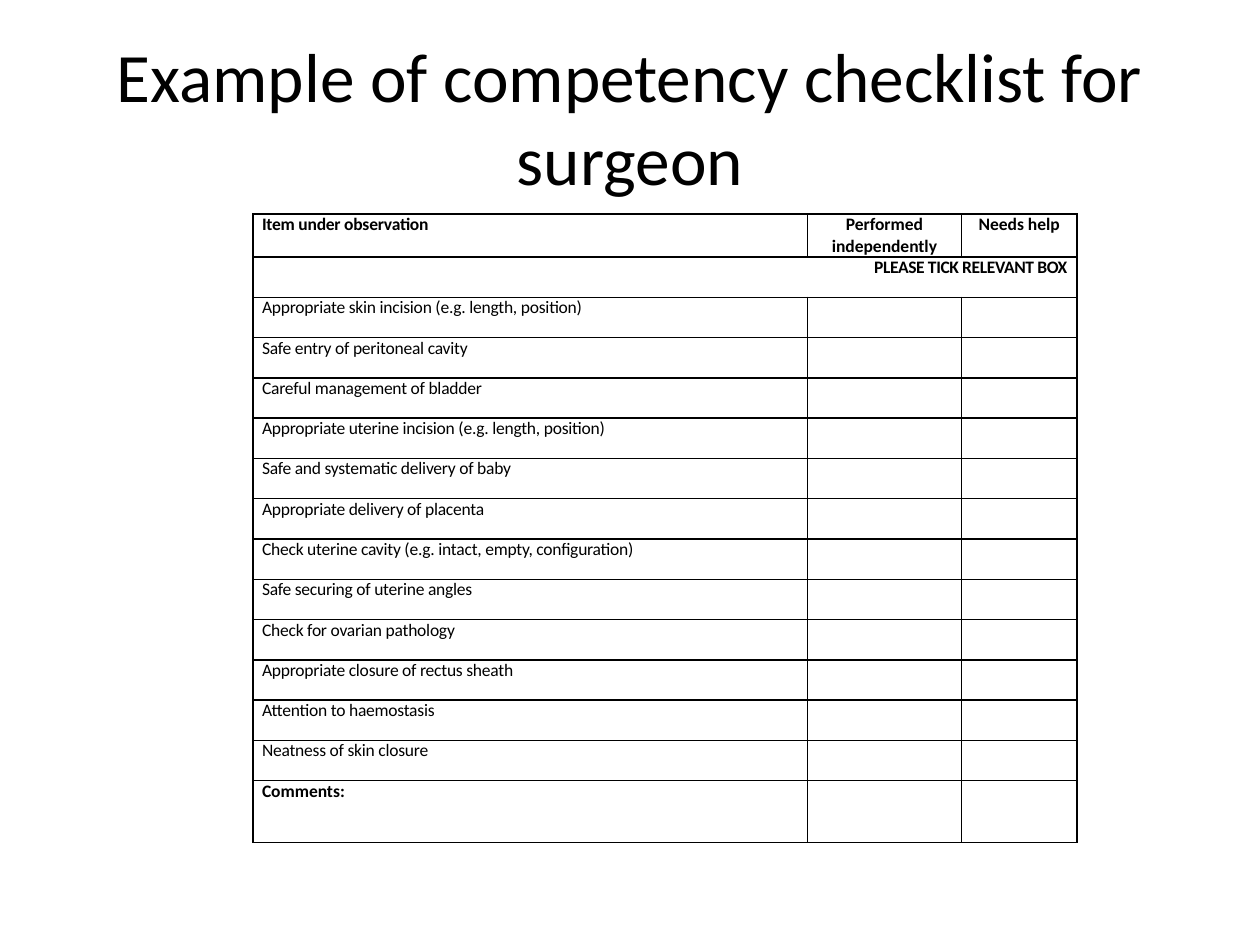
from dataclasses import dataclass

from pptx import Presentation
from pptx.dml.color import RGBColor
from pptx.enum import text
from pptx.oxml.ns import qn
from pptx.util import Inches, Pt
from lxml import etree

FONT = "Calibri"
BLACK = "000000"
LEFT, CENTER, RIGHT = text.PP_ALIGN.LEFT, text.PP_ALIGN.CENTER, text.PP_ALIGN.RIGHT

COLUMN_WIDTHS = [3.83, 0.57, 1.22, 0.92]
HEADER_HEIGHT, ITEM_HEIGHT, COMMENTS_HEIGHT = 0.34, 0.32, 0.49
CHECKLIST = [
    "Appropriate skin incision (e.g. length, position)",
    "Safe entry of peritoneal cavity",
    "Careful management of bladder",
    "Appropriate uterine incision (e.g. length, position)",
    "Safe and systematic delivery of baby",
    "Appropriate delivery of placenta",
    "Check uterine cavity (e.g. intact, empty, configuration)",
    "Safe securing of uterine angles",
    "Check for ovarian pathology",
    "Appropriate closure of rectus sheath",
    "Attention to haemostasis",
    "Neatness of skin closure",
]


@dataclass
class Entry:
    row: int
    col: int
    words: str
    bold: bool = False
    align: text.PP_ALIGN = LEFT
    spacing: int = 0  # hundredths of a point


def format_run(r, size: float, bold: bool = False) -> None:
    for name, value in {"name": FONT, "size": Pt(size), "bold": bold}.items():
        setattr(r.font, name, value)
    r.font.color.rgb = RGBColor.from_string(BLACK)


def set_borders(cell, hidden: str = "") -> None:
    """Draw 1 pt borders on all sides but the hidden one (L or R)."""
    tcPr = cell._tc.get_or_add_tcPr()
    for i, side in enumerate("LRTB"):
        ln = etree.Element(qn(f"a:ln{side}"), w=str(Pt(1)))
        if side == hidden:
            etree.SubElement(ln, qn("a:noFill"))
        else:
            fill = etree.SubElement(ln, qn("a:solidFill"))
            etree.SubElement(fill, qn("a:srgbClr"), val=BLACK)
        tcPr.insert(i, ln)


def write_entry(table, entry: Entry) -> None:
    cell = table.cell(entry.row, entry.col)
    p = cell.text_frame.paragraphs[0]
    p.alignment = entry.align
    if entry.align == LEFT:
        p._p.get_or_add_pPr().set("marL", str(Inches(0.07)))
    elif entry.align == RIGHT:
        cell.margin_right = Inches(0.08)
    r = p.add_run()
    r.text = entry.words
    format_run(r, 10, entry.bold)
    r._r.get_or_add_rPr().set("spc", str(entry.spacing))


def add_checklist(slide, entries: list[Entry], heights: list[float]) -> None:
    table = slide.shapes.add_table(
        len(heights), len(COLUMN_WIDTHS), Inches(2.01), Inches(1.7),
        Inches(sum(COLUMN_WIDTHS)), Inches(sum(heights))).table
    table.first_row = table.horz_banding = False
    for column, width in zip(table.columns, COLUMN_WIDTHS):
        column.width = Inches(width)
    for row, height in zip(table.rows, heights):
        row.height = Inches(height)
        for col, cell in enumerate(row.cells):
            for side in ("left", "right", "top", "bottom"):
                setattr(cell, f"margin_{side}", 0)
            cell.fill.background()
            set_borders(cell, {0: "R", 1: "L"}.get(col, ""))
    table.cell(1, 1).merge(table.cell(1, 3))
    for entry in entries:
        write_entry(table, entry)


def main() -> None:
    prs = Presentation()
    prs.slide_width, prs.slide_height = Inches(10), Inches(7.5)
    slide = prs.slides.add_slide(prs.slide_layouts[5])

    title = slide.shapes.title
    title.left, title.top = Inches(0.5), Inches(0.3)
    title.width, title.height = Inches(9), Inches(1.25)
    tf = title.text_frame
    tf.text = "Example of competency checklist for surgeon"
    tf.auto_size = text.MSO_AUTO_SIZE.NONE
    tf.vertical_anchor = text.MSO_ANCHOR.MIDDLE
    tf.paragraphs[0].alignment = CENTER
    format_run(tf.paragraphs[0].runs[0], 39.6)

    heights = [HEADER_HEIGHT] + [ITEM_HEIGHT] * (len(CHECKLIST) + 1) + [COMMENTS_HEIGHT]
    entries = [
        Entry(0, 0, "Item under observation", True, spacing=-10),
        Entry(0, 2, "Performed independently", True, CENTER),
        Entry(0, 3, "Needs help", True, CENTER),
        Entry(1, 1, "PLEASE TICK RELEVANT BOX", True, RIGHT, -20),
        *(Entry(row, 0, item, spacing=-10) for row, item in enumerate(CHECKLIST, 2)),
        Entry(len(heights) - 1, 0, "Comments:", True),
    ]
    add_checklist(slide, entries, heights)
    prs.save("out.pptx")


if __name__ == "__main__":
    main()
